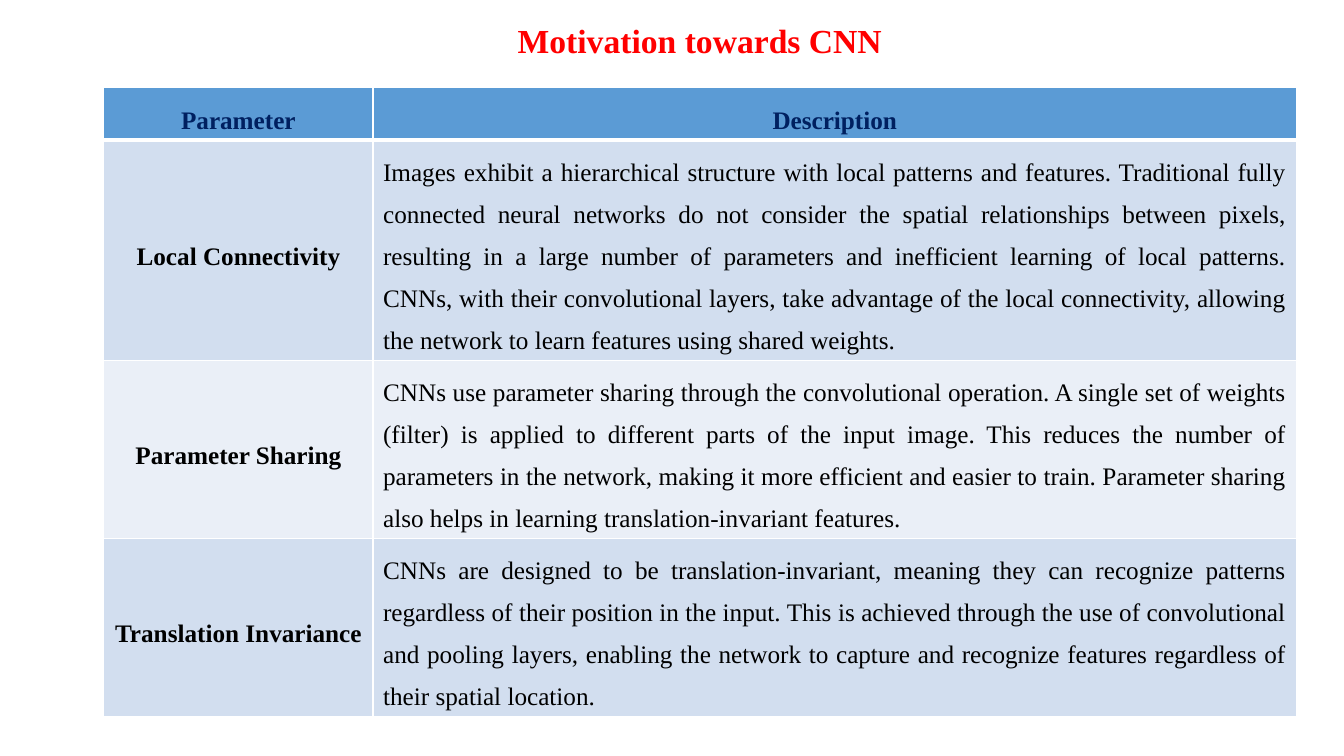
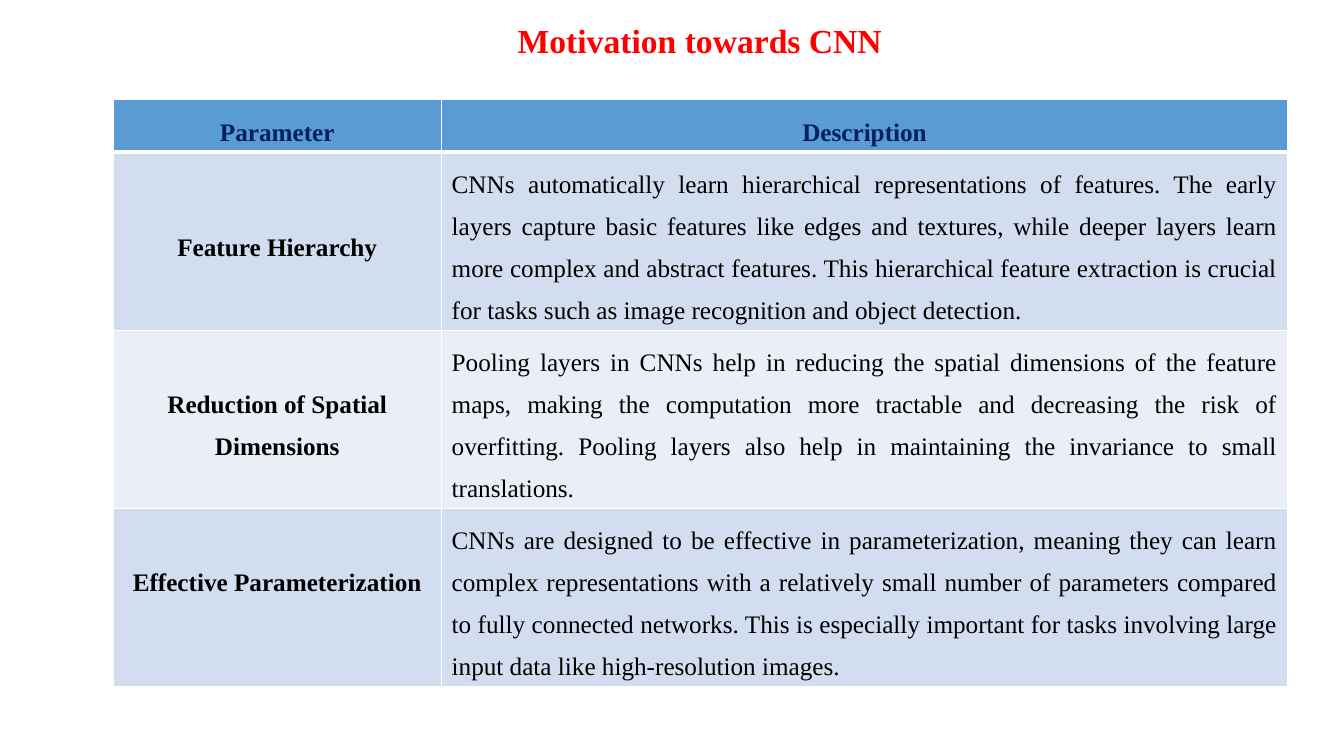
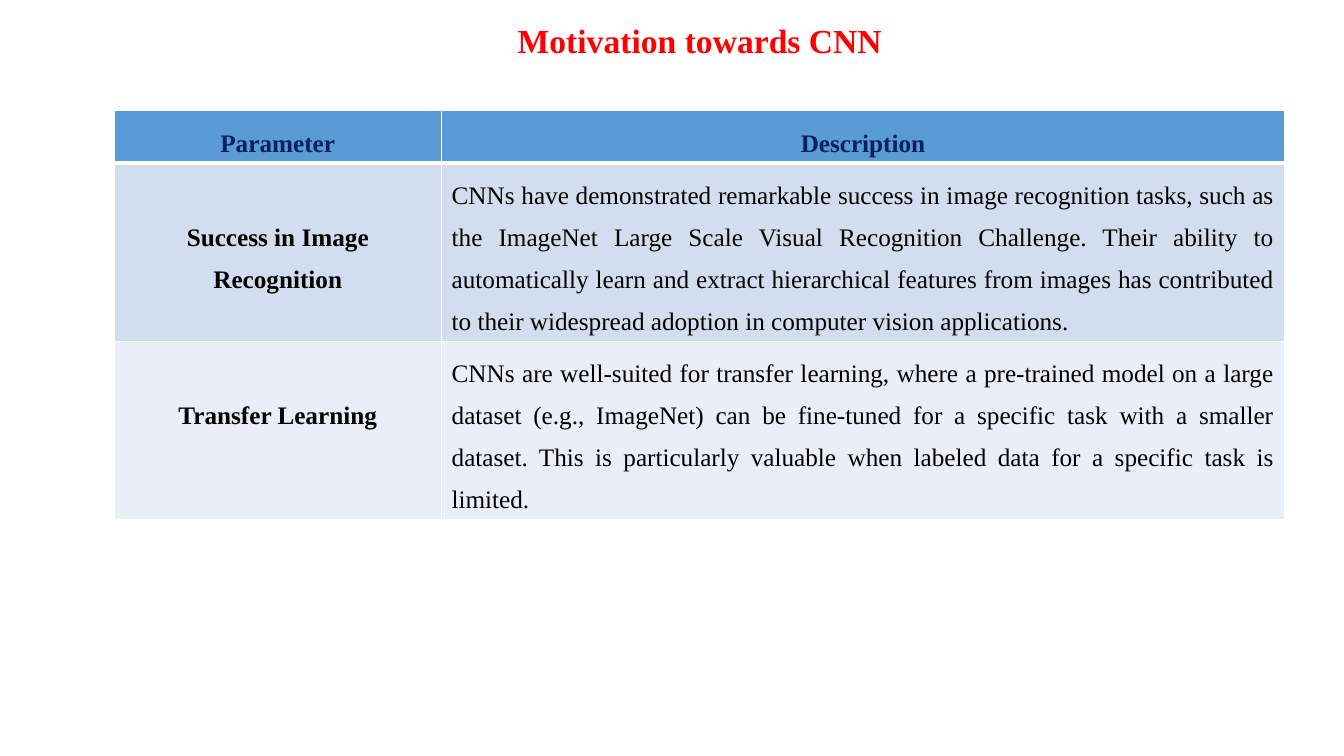
from lxml.etree import SubElement
from pptx import Presentation
from pptx.dml.color import RGBColor
from pptx.enum.text import MSO_ANCHOR, MSO_AUTO_SIZE, PP_ALIGN
from pptx.oxml.ns import qn
from pptx.util import Inches, Pt

TITLE = "Motivation towards CNN"
HEADINGS = ("Parameter", "Description")

# Each row: parameter, description, lines of description, lines kept free below the parameter
SLIDES = [
    {
        "left": 1.03, "top": 0.87, "columns": (2.67, 9.16),
        "rows": [
            ("Local Connectivity",
             "Images exhibit a hierarchical structure with local patterns and features. "
             "Traditional fully connected neural networks do not consider the spatial "
             "relationships between pixels, resulting in a large number of parameters and "
             "inefficient learning of local patterns. CNNs, with their convolutional layers, "
             "take advantage of the local connectivity, allowing the network to learn "
             "features using shared weights.", 5, 0),
            ("Parameter Sharing",
             "CNNs use parameter sharing through the convolutional operation. A single set of "
             "weights (filter) is applied to different parts of the input image. This reduces "
             "the number of parameters in the network, making it more efficient and easier to "
             "train. Parameter sharing also helps in learning translation-invariant features.",
             4, 0),
            ("Translation Invariance",
             "CNNs are designed to be translation-invariant, meaning they can recognize "
             "patterns regardless of their position in the input. This is achieved through "
             "the use of convolutional and pooling layers, enabling the network to capture "
             "and recognize features regardless of their spatial location.", 4, 0),
        ],
    },
    {
        "left": 1.12, "top": 0.99, "columns": (3.26, 8.39),
        "rows": [
            ("Feature Hierarchy",
             "CNNs automatically learn hierarchical representations of features. The early "
             "layers capture basic features like edges and textures, while deeper layers learn "
             "more complex and abstract features. This hierarchical feature extraction is "
             "crucial for tasks such as image recognition and object detection.", 4, 0),
            ("Reduction of Spatial Dimensions",
             "Pooling layers in CNNs help in reducing the spatial dimensions of the feature "
             "maps, making the computation more tractable and decreasing the risk of "
             "overfitting. Pooling layers also help in maintaining the invariance to small "
             "translations.", 4, 0),
            ("Effective Parameterization",
             "CNNs are designed to be effective in parameterization, meaning they can learn "
             "complex representations with a relatively small number of parameters compared "
             "to fully connected networks. This is especially important for tasks involving "
             "large input data like high-resolution images.", 4, 1),
        ],
    },
    {
        "left": 1.13, "top": 1.1, "columns": (3.25, 8.36),
        "rows": [
            ("Success in Image Recognition",
             "CNNs have demonstrated remarkable success in image recognition tasks, such as "
             "the ImageNet Large Scale Visual Recognition Challenge. Their ability to "
             "automatically learn and extract hierarchical features from images has "
             "contributed to their widespread adoption in computer vision applications.", 4, 0),
            ("Transfer Learning",
             "CNNs are well-suited for transfer learning, where a pre-trained model on a large "
             "dataset (e.g., ImageNet) can be fine-tuned for a specific task with a smaller "
             "dataset. This is particularly valuable when labeled data for a specific task is "
             "limited.", 4, 1),
        ],
    },
]

COLORS = {
    "title": "FF0000", "heading": "002060", "body": "000000", "border": "FFFFFF",
    "header": "5B9BD5", "odd": "D2DEEF", "even": "EAEFF7",
}
FONT = "Times New Roman"
LINE = Pt(30)
PADDING = Inches(0.05)
HEADER_HEIGHT = Inches(0.52)


def write(frame, text, size, color, bold, align, spacing):
    frame.text = text
    paragraph = frame.paragraphs[0]
    paragraph.alignment = align
    paragraph.line_spacing = spacing
    font = paragraph.runs[0].font
    font.name, font.size, font.bold = FONT, Pt(size), bold
    font.color.rgb = RGBColor.from_string(COLORS[color])


def paint_cell(cell, fill, top=1, bottom=1):
    """Give the cell white borders, with widths in points, and a solid fill."""
    properties = cell._tc.get_or_add_tcPr()
    for side, width in (("L", 1), ("R", 1), ("T", top), ("B", bottom)):
        line = SubElement(properties, qn(f"a:ln{side}"), w=str(Pt(width)))
        solid = SubElement(line, qn("a:solidFill"))
        SubElement(solid, qn("a:srgbClr"), val=COLORS["border"])
    cell.fill.solid()
    cell.fill.fore_color.rgb = RGBColor.from_string(COLORS[fill])


def add_title(slide):
    title = slide.shapes.title
    title.left, title.top = Inches(1.94), Inches(0.18)
    title.width, title.height = Inches(10), Inches(0.49)
    frame = title.text_frame
    write(frame, TITLE, 24, "title", True, PP_ALIGN.CENTER, 0.9)
    frame.auto_size = MSO_AUTO_SIZE.NONE
    frame.vertical_anchor = MSO_ANCHOR.MIDDLE


def add_parameter_table(slide, content):
    rows = content["rows"]
    widths = [Inches(width) for width in content["columns"]]
    heights = [HEADER_HEIGHT] + [lines * LINE + 2 * PADDING for _, _, lines, _ in rows]
    table = slide.shapes.add_table(
        len(heights), len(widths), Inches(content["left"]), Inches(content["top"]),
        sum(widths), sum(heights)).table
    for column, width in zip(table.columns, widths):
        column.width = width
    for row, height in zip(table.rows, heights):
        row.height = height

    for column, heading in enumerate(HEADINGS):
        cell = table.cell(0, column)
        paint_cell(cell, "header", bottom=3)
        cell.vertical_anchor = MSO_ANCHOR.MIDDLE
        write(cell.text_frame, heading, 18, "heading", True, PP_ALIGN.CENTER, 1.5)

    for number, (parameter, description, _, free_lines) in enumerate(rows, 1):
        name_cell, description_cell = table.cell(number, 0), table.cell(number, 1)
        for cell in (name_cell, description_cell):
            paint_cell(cell, "odd" if number % 2 else "even", top=3 if number == 1 else 1)
        name_cell.vertical_anchor = MSO_ANCHOR.MIDDLE
        name_cell.margin_bottom = PADDING + free_lines * LINE
        write(name_cell.text_frame, parameter, 18, "body", True, PP_ALIGN.CENTER, LINE)
        write(description_cell.text_frame, description, 18, "body", False,
              PP_ALIGN.JUSTIFY, LINE)


def main():
    deck = Presentation()
    deck.slide_width, deck.slide_height = Inches(13.33), Inches(7.5)
    title_only = deck.slide_layouts[5]
    for content in SLIDES:
        slide = deck.slides.add_slide(title_only)
        add_title(slide)
        add_parameter_table(slide, content)
    deck.save("out.pptx")


if __name__ == "__main__":
    main()
